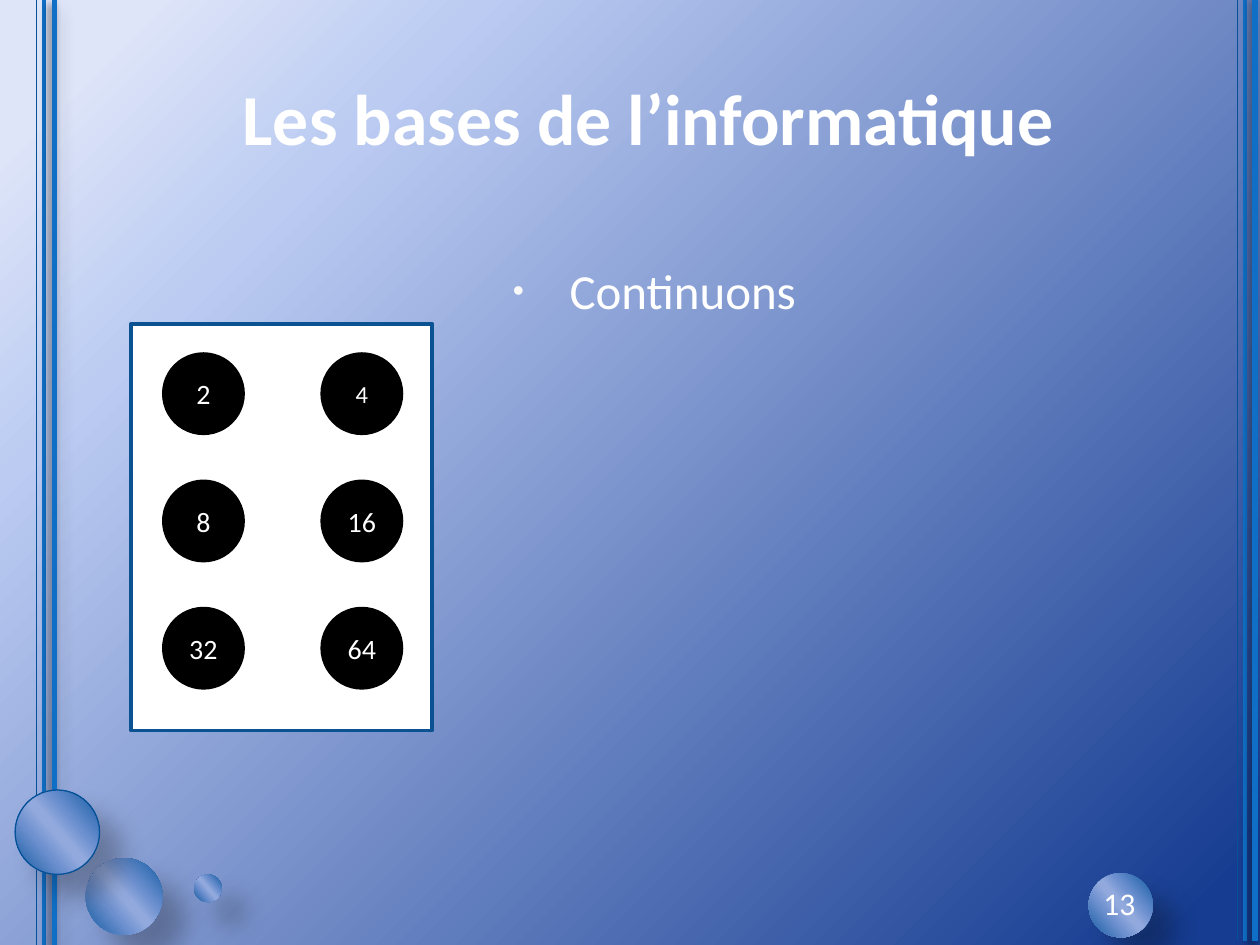
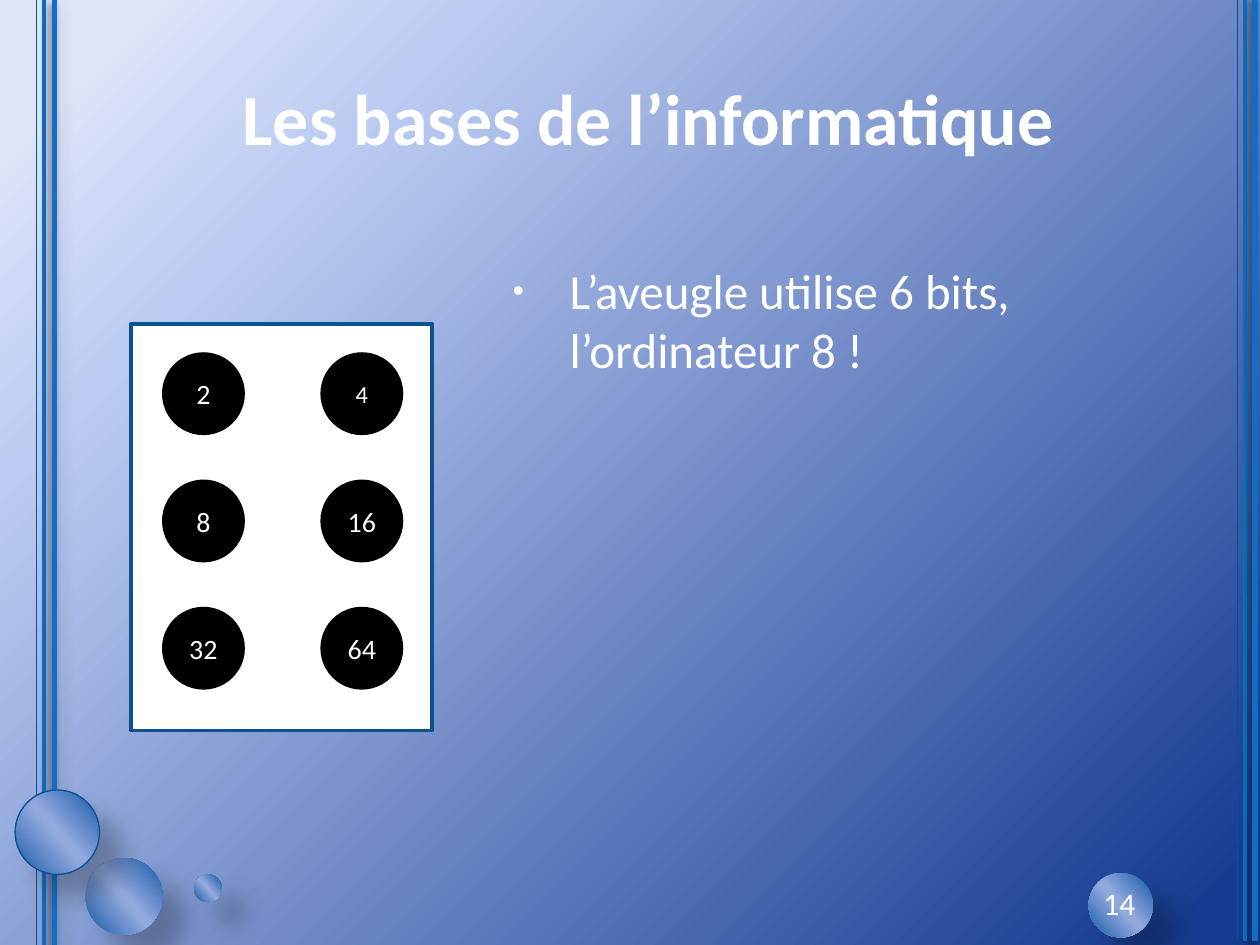
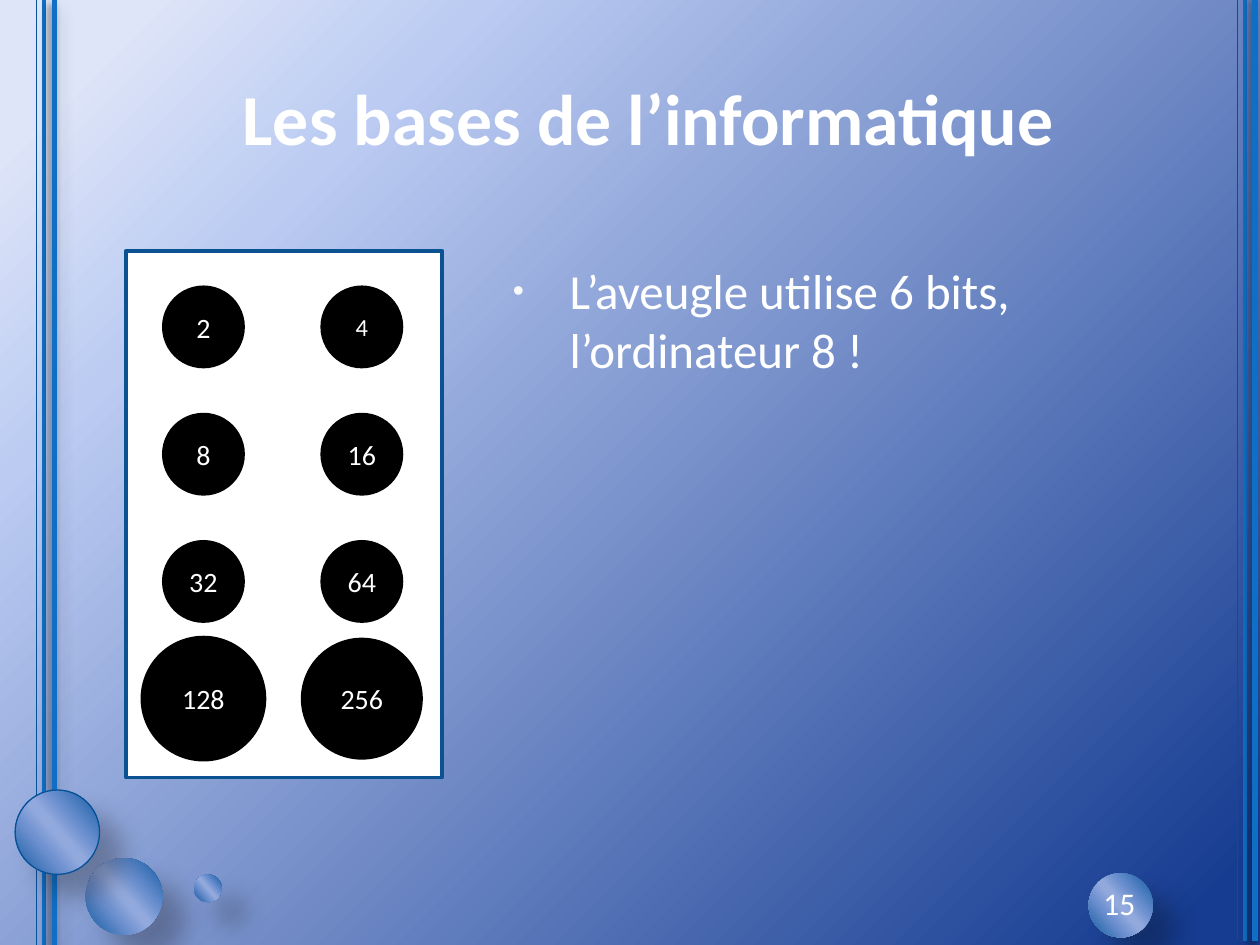
from pptx import Presentation
from pptx.dml.color import RGBColor
from pptx.enum.shapes import MSO_CONNECTOR as Connector, MSO_SHAPE as Shape
from pptx.enum.text import MSO_ANCHOR as Anchor, MSO_AUTO_SIZE as AutoSize, PP_ALIGN as Align
from pptx.oxml import parse_xml
from pptx.oxml.ns import nsdecls, qn
from pptx.util import Pt

# Shared look
FONT = "Calibri"
WHITE = RGBColor(0xFF, 0xFF, 0xFF)
BLACK = RGBColor(0x00, 0x00, 0x00)
RAIL_BLUE = RGBColor(0x0F, 0x6F, 0xC6)
EDGE_BLUE = RGBColor(0x04, 0x51, 0x97)
CELL_BLUE = RGBColor(0x0B, 0x52, 0x92)
BULLET_GREY = RGBColor(0xF9, 0xF9, 0xF9)
DEEP_BLUE = RGBColor(0x0C, 0x59, 0x9F)
MID_BLUE = RGBColor(0x6B, 0x8F, 0xCF)
SOFT_BLUE = RGBColor(0x6D, 0x90, 0xCF)
PALE_BLUE = RGBColor(0x91, 0xA9, 0xDD)

BACKDROP_STOPS = [(4, RGBColor(0x16, 0x3C, 0x91)), (78, RGBColor(0xBB, 0xCB, 0xF2)),
                  (93, RGBColor(0xDE, 0xE5, 0xF8))]
BALL_STOPS = [(0, DEEP_BLUE), (33, MID_BLUE), (47, PALE_BLUE), (53, PALE_BLUE),
              (68, SOFT_BLUE), (100, DEEP_BLUE)]
FROM_CORNER = '<a:path path="circle"><a:fillToRect l="100000" t="100000"/></a:path>'
DIAGONAL = f'<a:lin ang="{139 * 60000}" scaled="1"/>'

# Shadows: opacity in percent, blur, distance, angle
RAIL_SHADOW = (35, 10.2, 8, 45)
THICK_RAIL_SHADOW = (40, 4, 3, 135)
BALL_SHADOW = (26, 15, 18, 45)

# Rails: offset from the first, colour, width, shadow
RAILS = [(4.32, RAIL_BLUE, 2, RAIL_SHADOW), (10.08, RAIL_BLUE, 3, THICK_RAIL_SHADOW),
         (0, EDGE_BLUE, 0.75, None)]
# Balls: left, top, diameter, outlined
BALLS = [(48.96, 490.32, 43.92, False), (8.64, 451.44, 48.24, True),
         (110.88, 499.68, 15.84, False), (622.08, 498.96, 36.72, False)]

# Slide content
TITLE = "Les bases de l’informatique"
TITLE_BOX = (46.8, 21.6, 648, 90)
BODY_BOX = (275.04, 145.44, 372.96, 348.48)
NUMBER_BOX = (623.52, 501.84, 59.76, 28.8)
FIRST_NUMBER = 13

COLUMN_PITCH = 90.5
DOT = 45.36
# Dot rows: centre below the first row, then value, diameter, text size for each dot
SIX_BITS = [(0, [("2", DOT, 16), ("4", DOT, 14)]),
            (72.72, [("8", DOT, 16), ("16", DOT, 16)]),
            (145.44, [("32", DOT, 16), ("64", DOT, 16)])]
EIGHT_BITS = SIX_BITS + [(212.4, [("128", 69.84, 16), ("256", 67.68, 16)])]
SIX_CELL = ((74.88, 185.04, 172.08, 232.56), (41.4, 39.96), SIX_BITS)
EIGHT_CELL = ((72, 143.28, 180.72, 300.96), (44.28, 43.56), EIGHT_BITS)

BITS_REMARK = "L’aveugle utilise 6 bits, l’ordinateur 8 !"
# Slides: remark, cell, cell grouped
SLIDES = [("Continuons", SIX_CELL, False), (BITS_REMARK, SIX_CELL, True),
          (BITS_REMARK, EIGHT_CELL, True)]


def lengths(box):
    return [Pt(value) for value in box]


def place(shape, box):
    shape.left, shape.top, shape.width, shape.height = lengths(box)


def set_gradient(properties, stops, direction):
    """Swap the solid fill of the properties for a gradient."""
    marks = "".join(f'<a:gs pos="{pos * 1000}"><a:srgbClr val="{colour}"/></a:gs>'
                    for pos, colour in stops)
    gradient = parse_xml(f'<a:gradFill {nsdecls("a")} rotWithShape="1">'
                         f"<a:gsLst>{marks}</a:gsLst>{direction}</a:gradFill>")
    properties.replace(properties.find(qn("a:solidFill")), gradient)


def set_shadow(shape, shadow):
    """Give a shape or connector its shadow, or none; call after setting the line."""
    content = ""
    if shadow:
        opacity, blur, distance, angle = shadow
        content = (f'<a:outerShdw blurRad="{int(Pt(blur))}" dist="{int(Pt(distance))}" '
                   f'dir="{angle * 60000}" algn="ctr" rotWithShape="0">'
                   f'<a:srgbClr val="{BLACK}"><a:alpha val="{opacity * 1000}"/></a:srgbClr>'
                   "</a:outerShdw>")
    shape.element.spPr.append(parse_xml(f'<a:effectLst {nsdecls("a")}>{content}</a:effectLst>'))


def set_line(shape, colour, width):
    shape.line.color.rgb = colour
    shape.line.width = Pt(width)


def write(paragraph, text, size, bold=False):
    run = paragraph.add_run()
    run.text = text
    run.font.name = FONT
    run.font.size = Pt(size)
    run.font.bold = bold
    run.font.color.rgb = WHITE


# Decoration shared through the layout
def add_rails(shapes, left, top, height):
    rails = []
    for offset, colour, width, shadow in RAILS:
        x = Pt(left + offset)
        rail = shapes.add_connector(Connector.STRAIGHT, x, Pt(top), x, Pt(top + height))
        set_line(rail, colour, width)
        set_shadow(rail, shadow)
        rails.append(rail)
    return rails


def add_ball(shapes, left, top, diameter, outlined):
    ball = shapes.add_shape(Shape.OVAL, *lengths((left, top, diameter, diameter)))
    ball.fill.solid()
    set_gradient(ball.element.spPr, BALL_STOPS, DIAGONAL)
    if outlined:
        set_line(ball, EDGE_BLUE, 0.75)
    else:
        ball.line.fill.background()
    set_shadow(ball, BALL_SHADOW)
    return ball


def decorate(layout, shapes):
    """Draw the decoration with the given shapes, then hand it to the layout."""
    layout.background.fill.solid()
    backdrop = layout.element.cSld.find(qn("p:bg")).find(qn("p:bgPr"))
    set_gradient(backdrop, BACKDROP_STOPS, FROM_CORNER)
    parts = add_rails(shapes, 20.88, 0, 540)
    parts += [add_ball(shapes, *ball) for ball in BALLS[:3]]
    parts += add_rails(shapes, 707.04, -2.16, 540)
    parts.append(add_ball(shapes, *BALLS[3]))
    for number, part in enumerate(parts, start=100):
        part.element.xpath(".//p:cNvPr")[0].set("id", str(number))
        layout.element.cSld.spTree.append(part.element)


# Text regions
def fill_title(title, box):
    place(title, box)
    frame = title.text_frame
    frame.auto_size = AutoSize.NONE
    frame.vertical_anchor = Anchor.MIDDLE
    heading = frame.paragraphs[0]
    heading.alignment = Align.CENTER
    write(heading, TITLE, 41, bold=True)


def fill_body(body, box, remark):
    place(body, box)
    body.text_frame.auto_size = AutoSize.NONE
    item = body.text_frame.paragraphs[0]
    write(item, remark, 28)
    layout = item._p.get_or_add_pPr()
    layout.set("marL", str(int(Pt(43.2))))
    layout.set("indent", str(int(Pt(-32.4))))
    for tag in (f'spcBef {nsdecls("a")}><a:spcPct val="20000"/></a:spcBef',
                f'buClr {nsdecls("a")}><a:srgbClr val="{BULLET_GREY}"/></a:buClr',
                f'buSzPct {nsdecls("a")} val="65000"/',
                f'buFont {nsdecls("a")} typeface="Arial"/',
                f'buChar {nsdecls("a")} char="•"/'):
        layout.append(parse_xml(f"<a:{tag}>"))


def add_number(shapes, box, number):
    frame = shapes.add_textbox(*lengths(box)).text_frame
    frame.word_wrap = True
    write(frame.paragraphs[0], str(number), 18)


# Braille cell
def add_dot(shapes, centre_x, centre_y, value, diameter, size):
    box = (centre_x - diameter / 2, centre_y - diameter / 2, diameter, diameter)
    dot = shapes.add_shape(Shape.OVAL, *lengths(box))
    dot.fill.solid()
    dot.fill.fore_color.rgb = BLACK
    set_line(dot, BLACK, 2)
    set_shadow(dot, None)
    dot.text_frame.word_wrap = False
    dot.text_frame.vertical_anchor = Anchor.MIDDLE
    label = dot.text_frame.paragraphs[0]
    label.alignment = Align.CENTER
    write(label, value, size)


def add_cell(shapes, box, first_centre, rows):
    card = shapes.add_shape(Shape.RECTANGLE, *lengths(box))
    card.fill.solid()
    card.fill.fore_color.rgb = WHITE
    set_line(card, CELL_BLUE, 2)
    set_shadow(card, None)
    left, top = box[0] + first_centre[0], box[1] + first_centre[1]
    for drop, dots in rows:
        for column, dot in enumerate(dots):
            add_dot(shapes, left + column * COLUMN_PITCH, top + drop, *dot)


def add_lesson(slide, number, remark, cell, grouped):
    fill_title(slide.shapes.title, TITLE_BOX)
    fill_body(slide.placeholders[1], BODY_BOX, remark)
    add_number(slide.shapes, NUMBER_BOX, number)
    shapes = slide.shapes.add_group_shape().shapes if grouped else slide.shapes
    add_cell(shapes, *cell)


def main():
    deck = Presentation()
    deck.slide_width, deck.slide_height = Pt(720), Pt(540)
    layout = deck.slide_layouts[1]
    for index, content in enumerate(SLIDES):
        slide = deck.slides.add_slide(layout)
        if index == 0:
            decorate(layout, slide.shapes)
        add_lesson(slide, FIRST_NUMBER + index, *content)
    deck.save("out.pptx")


if __name__ == "__main__":
    main()
